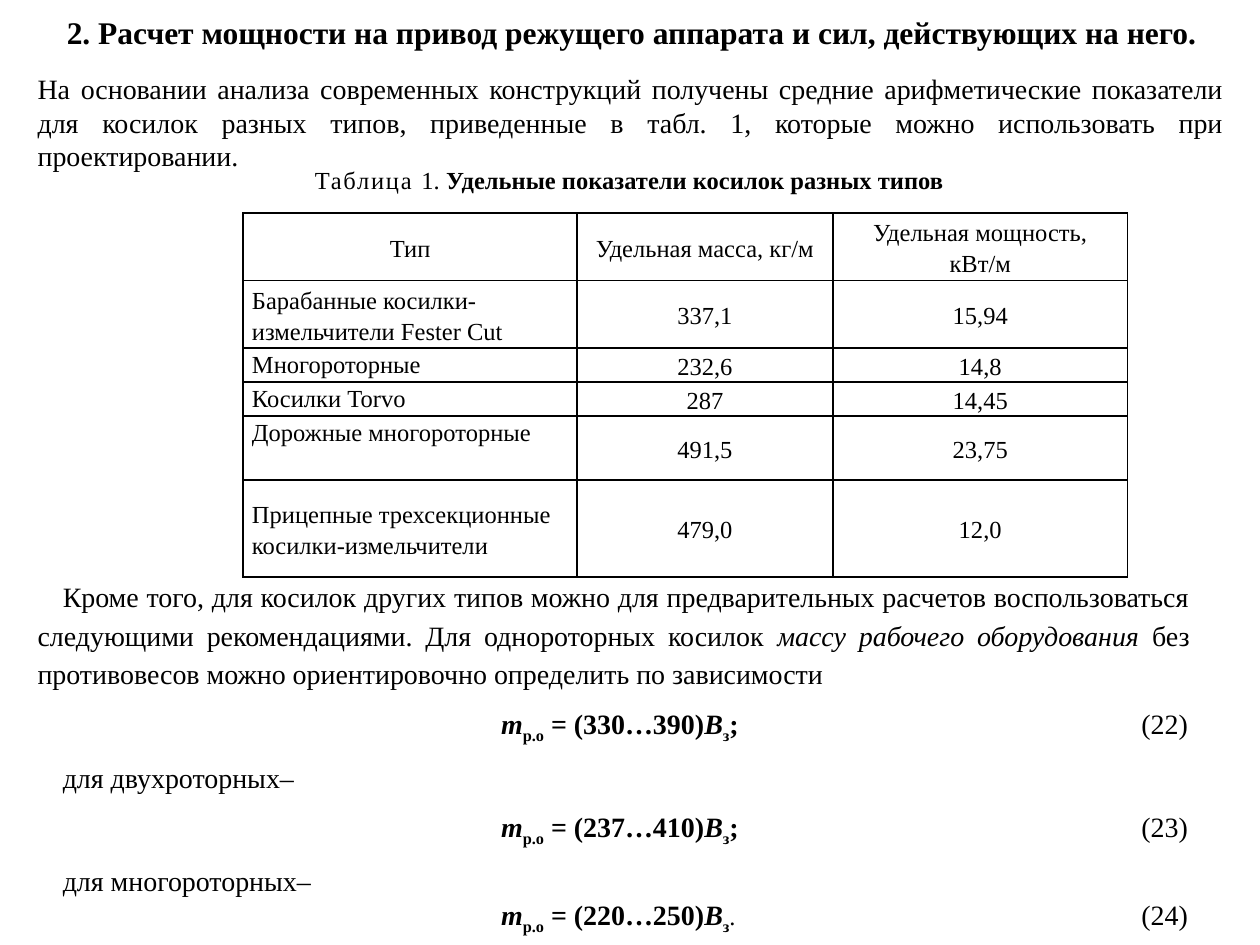
import pptx
import pptx.dml.color
import pptx.enum.text
import pptx.oxml
import pptx.oxml.ns
import pptx.util

ALIGN = pptx.enum.text.PP_ALIGN
ANCHOR = pptx.enum.text.MSO_ANCHOR
AUTO_SIZE = pptx.enum.text.MSO_AUTO_SIZE
FONT = "Times New Roman"
COLORS = {"ink": "000000"}
SLIDE_WIDTH = pptx.util.Inches(10)
SLIDE_HEIGHT = pptx.util.Inches(7.5)
LINE_SPACING = 1.15
INDENT = 0.2
FORMULA_TABS = ((3.68, "l"), (9.13, "r"))

COLUMN_WIDTHS = (2.65, 2.03, 2.34)
ROW_HEIGHTS = (0.51, 0.51, 0.25, 0.25, 0.51, 0.77)
TOP_ANCHORED_ROWS = (2, 3, 4)
ROWS = (
    ("Тип", "Удельная масса, кг/м", "Удельная мощность, кВт/м"),
    ("Барабанные косилки-измельчители Fester Cut", "337,1", "15,94"),
    ("Многороторные", "232,6", "14,8"),
    ("Косилки Torvo", "287", "14,45"),
    ("Дорожные многороторные", "491,5", "23,75"),
    ("Прицепные трехсекционные косилки-измельчители", "479,0", "12,0"),
)


def share(left, top, width, height):
    """Turn percentages of the slide's size into lengths."""
    return (int(SLIDE_WIDTH * left / 100), int(SLIDE_HEIGHT * top / 100),
            int(SLIDE_WIDTH * width / 100), int(SLIDE_HEIGHT * height / 100))


def format_paragraph(paragraph, size, align=ALIGN.LEFT, spacing=None, bold=None):
    paragraph.alignment = align
    paragraph.line_spacing = spacing
    paragraph.font.name = FONT
    paragraph.font.size = pptx.util.Pt(size)
    paragraph.font.color.rgb = pptx.dml.color.RGBColor.from_string(COLORS["ink"])
    if bold is not None:
        paragraph.font.bold = bold


def add_run(paragraph, text, bold=None, italic=None, subscript=False, spacing=0):
    run = paragraph.add_run()
    run.text = text
    run.font.bold = bold
    run.font.italic = italic
    properties = run.font._element
    if subscript:
        properties.set("baseline", "-25000")
    if spacing:
        properties.set("spc", str(spacing * 100))
    return run


def add_text_box(slide, box, wrap=True):
    frame = slide.shapes.add_textbox(*share(*box)).text_frame
    frame.word_wrap = wrap
    frame.auto_size = AUTO_SIZE.SHAPE_TO_FIT_TEXT
    return frame


def set_title(slide, text, box):
    title = slide.shapes.title
    title.left, title.top, title.width, title.height = share(*box)
    frame = title.text_frame
    frame.text = text
    frame.word_wrap = True
    frame.auto_size = AUTO_SIZE.SHAPE_TO_FIT_TEXT
    frame.vertical_anchor = ANCHOR.TOP
    format_paragraph(frame.paragraphs[0], 18, bold=True)


def set_borders(cell, width=1):
    properties = cell._tc.get_or_add_tcPr()
    for position, side in enumerate(("lnL", "lnR", "lnT", "lnB")):
        border = pptx.oxml.parse_xml(
            f'<a:{side} {pptx.oxml.ns.nsdecls("a")} w="{pptx.util.Pt(width)}">'
            f'<a:solidFill><a:srgbClr val="{COLORS["ink"]}"/></a:solidFill></a:{side}>')
        properties.insert(position, border)


def add_data_table(slide, box):
    table = slide.shapes.add_table(len(ROWS), len(COLUMN_WIDTHS), *share(*box)).table
    table.first_row = False
    table.horz_banding = False
    for column, width in zip(table.columns, COLUMN_WIDTHS):
        column.width = pptx.util.Inches(width)
    for row_index, (row, height) in enumerate(zip(table.rows, ROW_HEIGHTS)):
        row.height = pptx.util.Inches(height)
        for column_index, cell in enumerate(row.cells):
            is_label = column_index == 0 and row_index > 0
            is_top = is_label and row_index in TOP_ANCHORED_ROWS
            cell.text = ROWS[row_index][column_index]
            cell.margin_left = cell.margin_right = pptx.util.Inches(0.07)
            cell.margin_top = cell.margin_bottom = 0
            cell.vertical_anchor = ANCHOR.TOP if is_top else ANCHOR.MIDDLE
            cell.fill.background()
            set_borders(cell)
            format_paragraph(cell.text_frame.paragraphs[0], 14,
                             ALIGN.LEFT if is_label else ALIGN.CENTER, LINE_SPACING)


def add_body_paragraph(frame, *parts):
    """Add an indented, justified paragraph of (text, italic) parts."""
    paragraph = frame.add_paragraph() if frame.text else frame.paragraphs[0]
    format_paragraph(paragraph, 16, ALIGN.JUSTIFY, LINE_SPACING)
    paragraph._p.get_or_add_pPr().set("indent", str(pptx.util.Inches(INDENT)))
    for text, italic in parts:
        add_run(paragraph, text, italic=italic)


def add_formula(frame, limits, mark, number, last=False):
    paragraph = frame.add_paragraph()
    format_paragraph(paragraph, 16, spacing=None if last else LINE_SPACING)
    if not last:
        paragraph.space_before = paragraph.space_after = pptx.util.Pt(6)
    # Tab stops place the formula and its number
    stops = "".join(f'<a:tab pos="{pptx.util.Inches(place)}" algn="{kind}"/>'
                    for place, kind in FORMULA_TABS)
    tabs = pptx.oxml.parse_xml(
        f'<a:tabLst {pptx.oxml.ns.nsdecls("a")}>{stops}</a:tabLst>')
    paragraph.font._element.addprevious(tabs)

    add_run(paragraph, "\tm", bold=True, italic=True)
    add_run(paragraph, "р.о", bold=True, subscript=True)
    add_run(paragraph, f" = ({limits})", bold=True)
    add_run(paragraph, "В", bold=True, italic=True)
    add_run(paragraph, "з", bold=True, subscript=True)
    ending = add_run(paragraph, mark, bold=not last)
    if last:
        ending.font.size = pptx.util.Pt(14)
    add_run(paragraph, f"\t({number})")


def main():
    presentation = pptx.Presentation()
    presentation.slide_width = SLIDE_WIDTH
    presentation.slide_height = SLIDE_HEIGHT
    slide = presentation.slides.add_slide(presentation.slide_layouts[5])

    # Title and introduction
    set_title(slide, "2. Расчет мощности на привод режущего аппарата и сил, "
                     "действующих на него.", (4.3, 0.67, 97.2, 6.67))
    introduction = add_text_box(slide, (2, 6.93, 96.1, 12.13)).paragraphs[0]
    format_paragraph(introduction, 16, ALIGN.JUSTIFY)
    add_run(introduction, "На основании анализа современных конструкций получены средние "
                          "арифметические показатели для косилок разных типов, приведенные "
                          "в табл. 1, которые можно использовать при проектировании.")

    # Table with its caption
    caption = add_text_box(slide, (24, 16.8, 53.7, 4.53), wrap=False).paragraphs[0]
    format_paragraph(caption, 14)
    add_run(caption, "Таблица ", spacing=1)
    add_run(caption, "1. ")
    add_run(caption, "Удельные показатели косилок разных типов", bold=True)
    add_data_table(slide, (19.3, 22.53, 70.2, 37.33))

    # Recommendations and formulas
    body = add_text_box(slide, (2, 60.13, 93.4, 39.87))
    add_body_paragraph(
        body,
        ("Кроме того, для косилок других типов можно для предварительных расчетов "
         "воспользоваться следующими рекомендациями. Для однороторных косилок ", None),
        ("массу рабочего оборудования", True),
        (" без противовесов можно ориентировочно определить по зависимости", None))
    add_formula(body, "330…390", ";", 22)
    add_body_paragraph(body, ("для двухроторных–", None))
    add_formula(body, "237…410", ";", 23)
    add_body_paragraph(body, ("для многороторных–", None))
    add_formula(body, "220…250", ".", 24, last=True)

    presentation.save("out.pptx")


if __name__ == "__main__":
    main()
